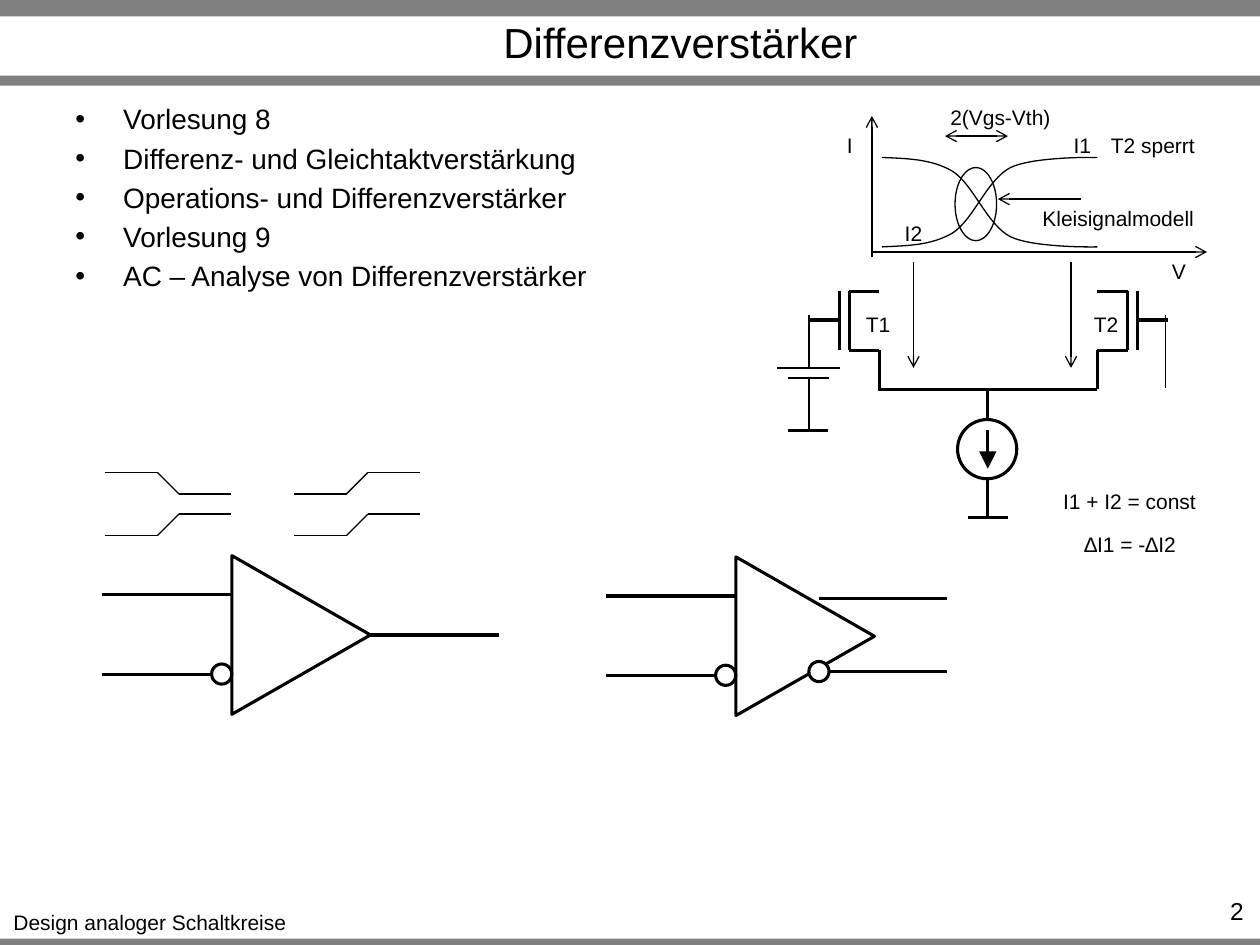
from lxml import etree
from pptx import Presentation
from pptx.dml.color import RGBColor
from pptx.enum.shapes import MSO_CONNECTOR, MSO_SHAPE
from pptx.enum.text import MSO_ANCHOR, MSO_AUTO_SIZE, PP_ALIGN
from pptx.oxml.ns import qn
from pptx.util import Inches, Pt

STRAIGHT = MSO_CONNECTOR.STRAIGHT
RECT, OVAL, TRIANGLE = MSO_SHAPE.RECTANGLE, MSO_SHAPE.OVAL, MSO_SHAPE.ISOSCELES_TRIANGLE
LEFT, CENTER, RIGHT = PP_ALIGN.LEFT, PP_ALIGN.CENTER, PP_ALIGN.RIGHT
MIDDLE, NO_FIT = MSO_ANCHOR.MIDDLE, MSO_AUTO_SIZE.NONE
W, H = 10, 7.5
BLACK, WHITE, GRAY = "000000", "FFFFFF", "808080"
THIN, THICK = 0.75, 1.75
OPEN = {"type": "arrow"}
SOLID = {"type": "triangle", "w": "lg", "len": "lg"}

TITLE = "Differenzverstärker"
BULLETS = [
    "Vorlesung 8",
    "Differenz- und Gleichtaktverstärkung",
    "Operations- und Differenzverstärker",
    "Vorlesung 9",
    "AC – Analyse von Differenzverstärker",
]
BARS = [(7.45, 0.05), (0, 0.13), (0.6, 0.08)]
LABELS = [
    ("Design analoger Schaltkreise", 0, 7.17, 2.38),
    ("T1", 6.77, 2.42, 0.4),
    ("T2", 8.58, 2.42, 0.4),
    ("I1 + I2 = const", 8.33, 3.83, 1.27),
    ("∆I1 = -∆I2", 8.5, 4.17, 0.94),
    ("I2", 7.08, 1.7, 0.34),
    ("I1", 8.42, 1, 0.34),
    ("Kleisignalmodell", 8.17, 1.58, 1.41),
    ("T2 sperrt", 8.71, 1, 0.88),
    ("2(Vgs-Vth)", 7.44, 0.78, 1),
    ("V", 9.2, 2, 0.31),
    ("I", 6.62, 1, 0.25),
]
STEPS = [(0.83, 3.75, 3.92), (0.83, 4.25, 4.08), (2.33, 3.92, 3.75), (2.33, 4.25, 4.08)]
TRANSISTORS = [(6.98, -1), (8.71, 1)]
SOURCE_WIRES = [
    ((6.97, 3.09), (8.71, 3.09)),
    ((7.84, 3.09), (7.84, 3.33)),
    ((7.84, 3.8), (7.84, 4.11)),
    ((7.68, 4.11), (8, 4.11)),
    ((6.25, 3.42), (6.57, 3.42)),
]
INPUT_WIRES = [
    ((9.25, 2.5), (9.25, 3.08)),
    ((6.42, 2.5), (6.42, 2.92)),
    ((6.17, 2.92), (6.67, 2.92)),
    ((6.25, 3), (6.58, 3)),
    ((6.42, 3), (6.42, 3.42)),
]
ARROWS = [
    ((7.25, 2.08), (7.25, 2.92)),
    ((8.5, 2.08), (8.5, 2.92)),
    ((8.58, 1.58), (7.92, 1.58)),
    ((6.92, 2.04), (6.92, 0.92)),
    ((6.92, 2), (9.58, 2)),
]
CURVE = [(7, 1.25), (7.2, 1.26), (7.39, 1.26), (7.56, 1.36), (7.73, 1.47),
         (7.83, 1.78), (8.02, 1.88), (8.21, 1.97), (8.71, 1.96), (8.71, 1.96)]
CURVE_SUM = 3.21


def color(value):
    return RGBColor.from_string(value)


def line(parent, start, end, width=THIN, head=None, tail=None):
    sp = parent.shapes.add_connector(STRAIGHT, *map(Inches, start + end))
    sp.line.color.rgb = color(BLACK)
    sp.line.width = Pt(width)
    ln = sp.line._get_or_add_ln()
    for tag, arrow in (("a:headEnd", head), ("a:tailEnd", tail)):
        if arrow:
            etree.SubElement(ln, qn(tag), arrow)
    etree.SubElement(sp._element.spPr, qn("a:effectLst"))


def style(sp, fill=None, width=THICK):
    sp.shadow.inherit = False
    if fill:
        sp.fill.solid()
        sp.fill.fore_color.rgb = color(fill)
    else:
        sp.fill.background()
    if width:
        sp.line.color.rgb = color(BLACK)
        sp.line.width = Pt(width)
    else:
        sp.line.fill.background()


def shape(s, kind, box, fill=None, width=THICK):
    sp = s.shapes.add_shape(kind, *map(Inches, box))
    style(sp, fill, width)
    return sp


def write(p, text, size, align):
    p.alignment = align
    r = p.add_run()
    r.text = text
    r.font.size = Pt(size)
    r.font.name = "Arial"
    r.font.color.rgb = color(BLACK)


def text_box(s, box, wrap=True):
    tf = s.shapes.add_textbox(*map(Inches, box)).text_frame
    tf.word_wrap = wrap
    return tf


def bullet(p):
    pPr = p._p.get_or_add_pPr()
    pPr.set("marL", str(Inches(0.38)))
    pPr.set("indent", str(Inches(-0.38)))
    etree.SubElement(pPr, qn("a:buFont"), typeface="Arial")
    etree.SubElement(pPr, qn("a:buChar"), char="•")


def step(s, x, y1, y2):
    group = s.shapes.add_group_shape()
    points = [(x, y1), (x + 0.42, y1), (x + 0.59, y2), (x + 1, y2)]
    for start, end in zip(points, points[1:]):
        line(group, start, end)


def transistor(s, x, side):
    group = s.shapes.add_group_shape()
    channel, gate, lead = (x + side * d for d in (0.24, 0.32, 0.56))
    top, mid, bottom = 2.31, 2.54, 2.78
    for start, end in [
        ((x, top), (channel, top)),
        ((x, bottom), (channel, bottom)),
        ((channel, top), (channel, bottom)),
        ((gate, mid), (lead, mid)),
        ((gate, top), (gate, bottom)),
    ]:
        line(group, start, end, THICK)
    line(s, (x, bottom), (x, 3.09), THICK)


def amplifier(s, x, y, outputs, inverted):
    for row in (y - 0.32, y + 0.31):
        line(s, (x - 1.02, row), (x, row), THICK)
    for dx, dy in outputs:
        line(s, (x + dx, y + dy), (x + dx + 1.02, y + dy), THICK)
    shape(s, TRIANGLE, (x - 0.07, y - 0.55, 1.26, 1.1)).rotation = 90
    for dx, dy in inverted:
        shape(s, OVAL, (x + dx - 0.08, y + dy - 0.08, 0.16, 0.16), WHITE)


def bezier(p0, p1, p2, p3, t):
    u = 1 - t
    return tuple(u**3 * a + 3 * u * u * t * b + 3 * u * t * t * c + t**3 * d
                 for a, b, c, d in zip(p0, p1, p2, p3))


def curve(s, points):
    knots = [tuple(map(Inches, point)) for point in points]
    dots = [bezier(*knots[i:i + 4], k / 16)
            for i in range(0, len(knots) - 1, 3) for k in range(1, 17)]
    fb = s.shapes.build_freeform(*knots[0])
    fb.add_line_segments(dots, close=False)
    style(fb.convert_to_shape(), width=THIN)


def main():
    prs = Presentation()
    prs.slide_width, prs.slide_height = Inches(W), Inches(H)
    s = prs.slides.add_slide(prs.slide_layouts[5])
    for y, h in BARS:
        shape(s, RECT, (0, y, W, h), GRAY, None)

    title = s.shapes.title
    title.left, title.top, title.width, title.height = map(Inches, (1.3, 0.14, 8.2, 0.38))
    tf = title.text_frame
    tf.auto_size, tf.vertical_anchor = NO_FIT, MIDDLE
    write(tf.paragraphs[0], TITLE, 24, CENTER)

    tf = text_box(s, (0.5, 0.76, 9, 1.08))
    for i, text in enumerate(BULLETS):
        p = tf.add_paragraph() if i else tf.paragraphs[0]
        bullet(p)
        p.space_before = Pt(3.2 if i else 0)
        write(p, text, 16, LEFT)
    write(text_box(s, (9.1, 7.06, 0.87, 0.24)).paragraphs[0], "2", 14, RIGHT)

    amplifier(s, 1.83, 5.04, [(1.11, 0)], [(-0.07, 0.31)])
    amplifier(s, 5.83, 5.05, [(0.67, -0.3), (0.67, 0.28)], [(-0.07, 0.31), (0.67, 0.28)])
    for args in STEPS:
        step(s, *args)
    for args in TRANSISTORS:
        transistor(s, *args)
    shape(s, OVAL, (7.6, 3.33, 0.47, 0.47), WHITE)
    for start, end in SOURCE_WIRES:
        line(s, start, end, THICK)
    line(s, (7.84, 3.41), (7.84, 3.72), THICK, tail=SOLID)
    for start, end in INPUT_WIRES:
        line(s, start, end)
    curve(s, CURVE)
    curve(s, [(x, CURVE_SUM - y) for x, y in CURVE])
    shape(s, OVAL, (7.58, 1.33, 0.33, 0.58), width=THIN)
    for start, end in ARROWS:
        line(s, start, end, tail=OPEN)
    line(s, (7.5, 1.08), (8, 1.08), head=OPEN, tail=OPEN)
    for text, x, y, w in LABELS:
        write(text_box(s, (x, y, w, 0.3), False).paragraphs[0], text, 12, CENTER)
    prs.save("out.pptx")


if __name__ == "__main__":
    main()
